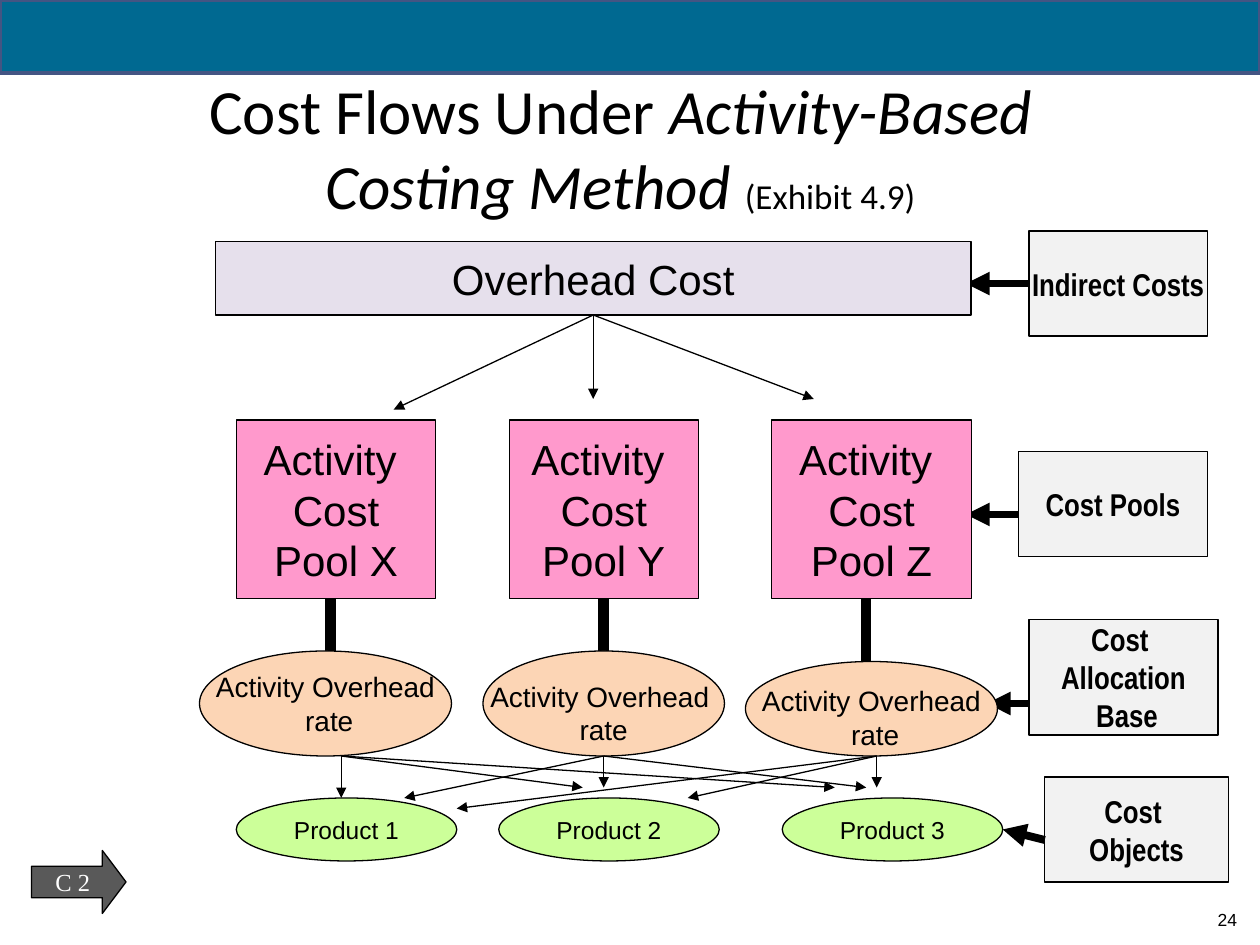
from pptx import Presentation
from pptx.dml.color import RGBColor
from pptx.enum.shapes import MSO_CONNECTOR, MSO_SHAPE
from pptx.enum.text import MSO_ANCHOR, PP_ALIGN
from pptx.oxml.ns import qn
from pptx.util import Pt
from lxml.etree import SubElement

PX = 7620  # EMU, 120 px to the inch
HUES = {
    "black": "000000", "white": "FFFFFF", "bar": "006991", "edge": "445583",
    "cost": "E6E0EC", "pool": "FF99CC", "rate": "FCD5B5", "item": "CCFF99",
    "tag": "F2F2F2", "mark": "595959",
}


def hue(name):
    return RGBColor.from_string(HUES[name])


def style(run, size, font="Arial", color="black", bold=False, italic=False):
    run.font.size, run.font.name = Pt(size), font
    run.font.bold, run.font.italic = bold, italic
    run.font.color.rgb = hue(color)


def draw(slide, kind, box, fill, text="", size=14, line="black", width=0.75, drop=0, **look):
    """Add a filled shape with centred text, moved down by drop px."""
    shape = slide.shapes.add_shape(kind, *(n * PX for n in box))
    shape.shadow.inherit = False
    shape.fill.solid()
    shape.fill.fore_color.rgb = hue(fill)
    shape.line.color.rgb = hue(line)
    shape.line.width = Pt(width)
    frame = shape.text_frame
    frame.text = text
    frame.word_wrap = False
    frame.vertical_anchor = MSO_ANCHOR.MIDDLE
    frame.margin_top, frame.margin_bottom = 2 * drop * PX, 0
    for par in frame.paragraphs:
        par.alignment = PP_ALIGN.CENTER
        for run in par.runs:
            style(run, size, **look)
    return shape


def link(slide, start, end, width=0.75, head=True):
    line = slide.shapes.add_connector(
        MSO_CONNECTOR.STRAIGHT, *(n * PX for n in start + end))
    line.line.color.rgb = hue("black")
    line.line.width = Pt(width)
    if head:
        SubElement(line.line._get_or_add_ln(), qn("a:tailEnd"), type="triangle")
    SubElement(line._element.spPr, qn("a:effectLst"))
    return line


def label(slide, box, parts, align):
    """Add a text box with one paragraph of (text, look) parts."""
    shape = slide.shapes.add_textbox(*(n * PX for n in box))
    frame = shape.text_frame
    frame.word_wrap = True
    par = frame.paragraphs[0]
    par.alignment = align
    for text, look in parts:
        run = par.add_run()
        run.text = text
        style(run, **look)
    return frame


def header(slide, box):
    x, y, w, h = box
    draw(slide, MSO_SHAPE.RECTANGLE, (x, y, w, 70), "bar", line="edge", width=2.25)
    big = {"size": 36, "font": "Calibri"}
    frame = label(slide, (x + 121, y + 56, 940, h - 56), [
        ("Cost Flows Under ", big),
        ("Activity-Based Costing Method ", {**big, "italic": True}),
        ("(Exhibit 4.9)", {**big, "size": 20}),
    ], PP_ALIGN.CENTER)
    frame.vertical_anchor = MSO_ANCHOR.MIDDLE


def tags(slide, box):
    """Add the level names at the right, with arrows to the flow."""
    x, y, w, h = box
    rows = [
        ("Indirect Costs", (10, 0, 170, 100), (10, 50), (-50, 50)),
        ("Cost Pools", (0, 210, 180, 100), (0, 270), (-50, 270)),
        ("Cost \nAllocation\n Base", (10, 370, 180, 110), (10, 450), (-30, 450)),
        ("Cost \nObjects", (25, 520, 175, 100), (25, 580), (-15, 570)),
    ]
    for text, (left, top, wide, high), start, end in rows:
        tag = draw(slide, MSO_SHAPE.RECTANGLE, (x + left, y + top, wide, high),
                   "tag", text, 18, font="Arial Narrow", bold=True)
        line = link(slide, (x + start[0], y + start[1]), (x + end[0], y + end[1]), 4.5)
        if start == (left, top + high // 2):
            line.begin_connect(tag, 1)


def overhead(slide, box):
    x, y, w, h = box
    cost = draw(slide, MSO_SHAPE.RECTANGLE, box, "cost", "Overhead Cost", 24)
    for dx, dy in ((170, 160), (360, 150), (570, 150)):
        line = link(slide, (x + w // 2, y + h), (x + dx, y + dy))
        line.begin_connect(cost, 2)


def pools(slide, box):
    x, y, w, h = box
    for name, dx, wide, stem in (("X", 0, 190, 90), ("Y", 260, 180, 350), ("Z", 510, 190, 600)):
        pool = draw(slide, MSO_SHAPE.RECTANGLE, (x + dx, y, wide, h), "pool",
                    f"Activity \nCost\nPool {name}", 24)
        line = link(slide, (x + stem, y + h), (x + stem, y + h + 90), 6, head=False)
        if stem == dx + wide // 2:
            line.begin_connect(pool, 2)


def rates(slide, box):
    x, y, w, h = box
    rows = [
        (0, 0, 240, 0, "Activity Overhead\n rate"),
        (270, 0, 230, 9, "Activity Overhead \nrate"),
        (520, 10, 240, 8, "Activity Overhead\n rate"),
    ]
    for dx, dy, wide, drop, text in rows:
        draw(slide, MSO_SHAPE.OVAL, (x + dx, y + dy, wide, h - dy), "rate",
             text, 16, drop=drop)


def products(slide, box):
    x, y, w, h = box
    for num, dx in enumerate((0, 250, 520), 1):
        draw(slide, MSO_SHAPE.OVAL, (x + dx, y, 210, h), "item", f"Product {num}")


def spread(slide, box):
    """Link each rate to every product."""
    x, y, w, h = box
    fans = {
        0: ((0, 40), (230, 30), (470, 30)),
        250: ((250, 30), (60, 40), (500, 30)),
        510: ((510, 30), (330, 40), (110, 50)),
    }
    for start, ends in fans.items():
        for dx, dy in ends:
            link(slide, (x + start, y), (x + dx, y + dy))


def footer(slide, box):
    x, y, w, h = box
    mark = draw(slide, MSO_SHAPE.RIGHT_ARROW, (x, y, 90, 60), "mark", "C 2",
                font="Times New Roman", color="white")
    mark.adjustments[0], mark.adjustments[1] = 0.5, 0.375
    label(slide, (x + w - 70, y + h - 30, 70, 30), [("24", {"size": 10})], PP_ALIGN.RIGHT)


def main():
    deck = Presentation()
    deck.slide_width, deck.slide_height = 1200 * PX, 900 * PX
    slide = deck.slides.add_slide(deck.slide_layouts[6])
    header(slide, (0, 0, 1200, 224))
    tags(slide, (970, 220, 200, 620))
    overhead(slide, (205, 230, 720, 70))
    pools(slide, (225, 400, 700, 170))
    rates(slide, (190, 620, 760, 100))
    products(slide, (225, 760, 730, 60))
    spread(slide, (325, 720, 510, 50))
    footer(slide, (30, 810, 1160, 80))
    deck.save("out.pptx")


if __name__ == "__main__":
    main()
